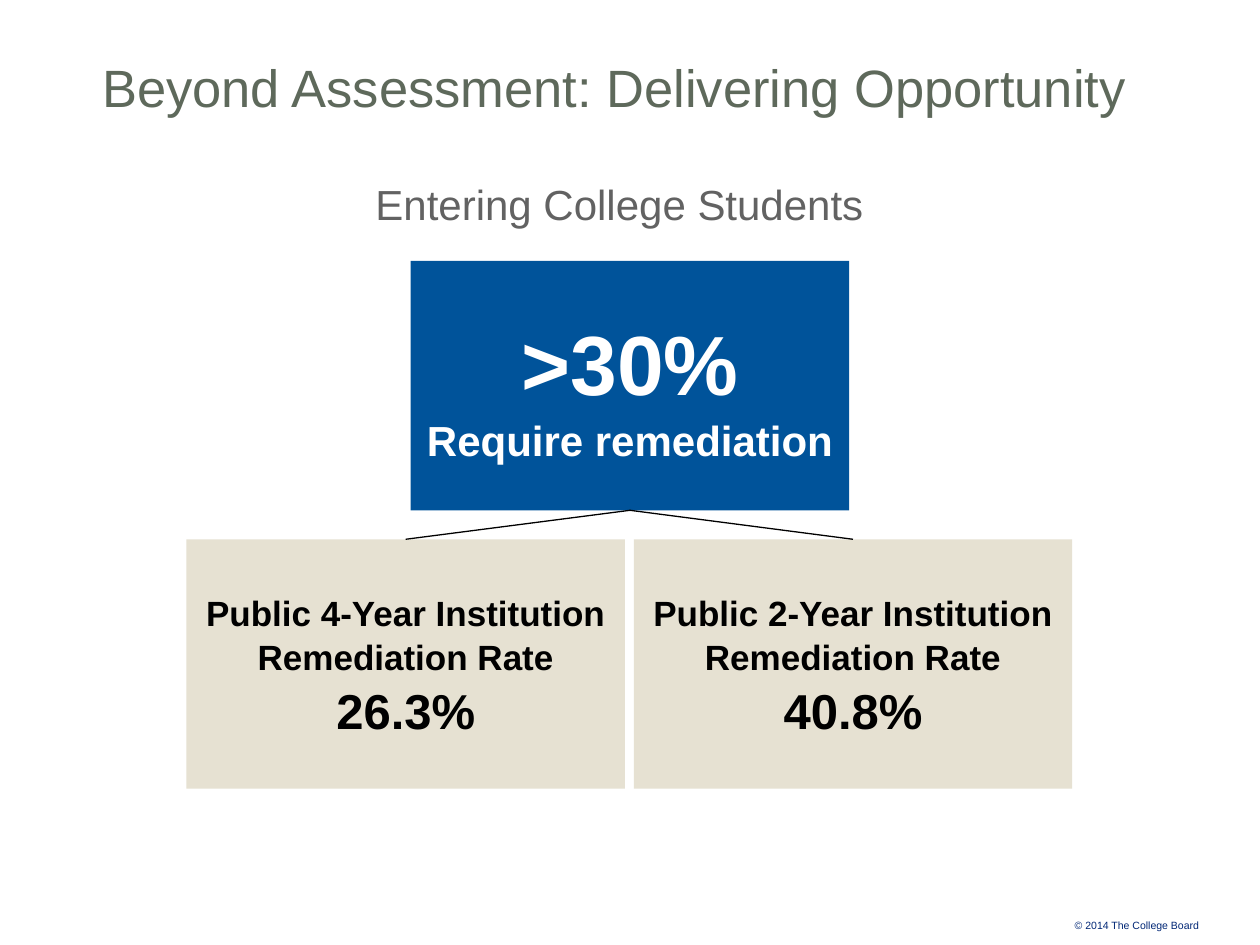
from lxml.etree import SubElement
from pptx import Presentation
from pptx.dml.color import RGBColor
from pptx.enum.shapes import MSO_CONNECTOR, MSO_SHAPE
from pptx.enum.text import MSO_ANCHOR, PP_ALIGN
from pptx.oxml.ns import qn
from pptx.util import Inches, Pt

BLUE, SAND, BLACK, WHITE = "00539A", "E6E1D2", "000000", "FFFFFF"
BOX_WIDTH, BOX_HEIGHT = 3.48, 1.98
PARENT_LEFT, PARENT_TOP, RATE_TOP = 3.26, 2.07, 4.28


def color(hex_string):
    return RGBColor.from_string(hex_string)


def write_lines(frame, lines, hex_color, bold=False, align=PP_ALIGN.LEFT, spacing=1.05):
    """Fill a text frame with one paragraph per (text, size) pair."""
    for index, (text, size) in enumerate(lines):
        paragraph = frame.paragraphs[0] if index == 0 else frame.add_paragraph()
        paragraph.alignment = align
        paragraph.line_spacing = spacing
        run = paragraph.add_run()
        run.text = text
        run.font.name = "Arial"
        run.font.size = Pt(size)
        run.font.bold = bold
        run.font.color.rgb = color(hex_color)


def add_label(slide, left, top, width, height, text, size, hex_color, **style):
    label = slide.shapes.add_textbox(Inches(left), Inches(top), Inches(width), Inches(height))
    frame = label.text_frame
    frame.word_wrap = True
    frame.margin_left = frame.margin_right = frame.margin_top = frame.margin_bottom = 0
    write_lines(frame, [(text, size)], hex_color, **style)


def add_stat_box(slide, left, top, fill, text_color, lines):
    box = slide.shapes.add_shape(
        MSO_SHAPE.RECTANGLE, Inches(left), Inches(top), Inches(BOX_WIDTH), Inches(BOX_HEIGHT))
    box.shadow.inherit = False
    box.fill.solid()
    box.fill.fore_color.rgb = color(fill)
    box.line.fill.background()
    box.text_frame.word_wrap = True
    box.text_frame.vertical_anchor = MSO_ANCHOR.MIDDLE
    write_lines(box.text_frame, lines, text_color, bold=True, align=PP_ALIGN.CENTER)


def add_branch(slide, start_x, start_y, end_x, end_y):
    branch = slide.shapes.add_connector(
        MSO_CONNECTOR.STRAIGHT, Inches(start_x), Inches(start_y), Inches(end_x), Inches(end_y))
    branch.line.color.rgb = color(BLACK)
    branch.line.width = Pt(0.75)
    SubElement(branch._element.spPr, qn("a:effectLst"))


def main():
    presentation = Presentation()
    presentation.slide_width, presentation.slide_height = Inches(10), Inches(7.5)
    slide = presentation.slides.add_slide(presentation.slide_layouts[6])

    add_label(slide, 8.53, 7.29, 1.03, 0.1, "© 2014 The College Board", 6, "002776", spacing=1)
    add_label(slide, 0.54, 0.41, 8.67, 0.6, "Beyond Assessment: Delivering Opportunity",
              30, "5E695B", align=PP_ALIGN.CENTER)
    add_label(slide, 2.98, 1.4, 4.03, 0.4, "Entering College Students", 24, "626262")

    add_stat_box(slide, PARENT_LEFT, PARENT_TOP, BLUE, WHITE,
                 [(">30%", 48), ("Require remediation", 24)])
    rates = [(1.48, "Public 4-Year Institution", "26.3%"),
             (5.03, "Public 2-Year Institution", "40.8%")]
    for left, institution, rate in rates:
        add_stat_box(slide, left, RATE_TOP, SAND, BLACK,
                     [(f"{institution} Remediation Rate", 20), (rate, 28)])
        add_branch(slide, PARENT_LEFT + BOX_WIDTH / 2, PARENT_TOP + BOX_HEIGHT,
                   left + BOX_WIDTH / 2, RATE_TOP)

    presentation.save("out.pptx")


if __name__ == "__main__":
    main()
